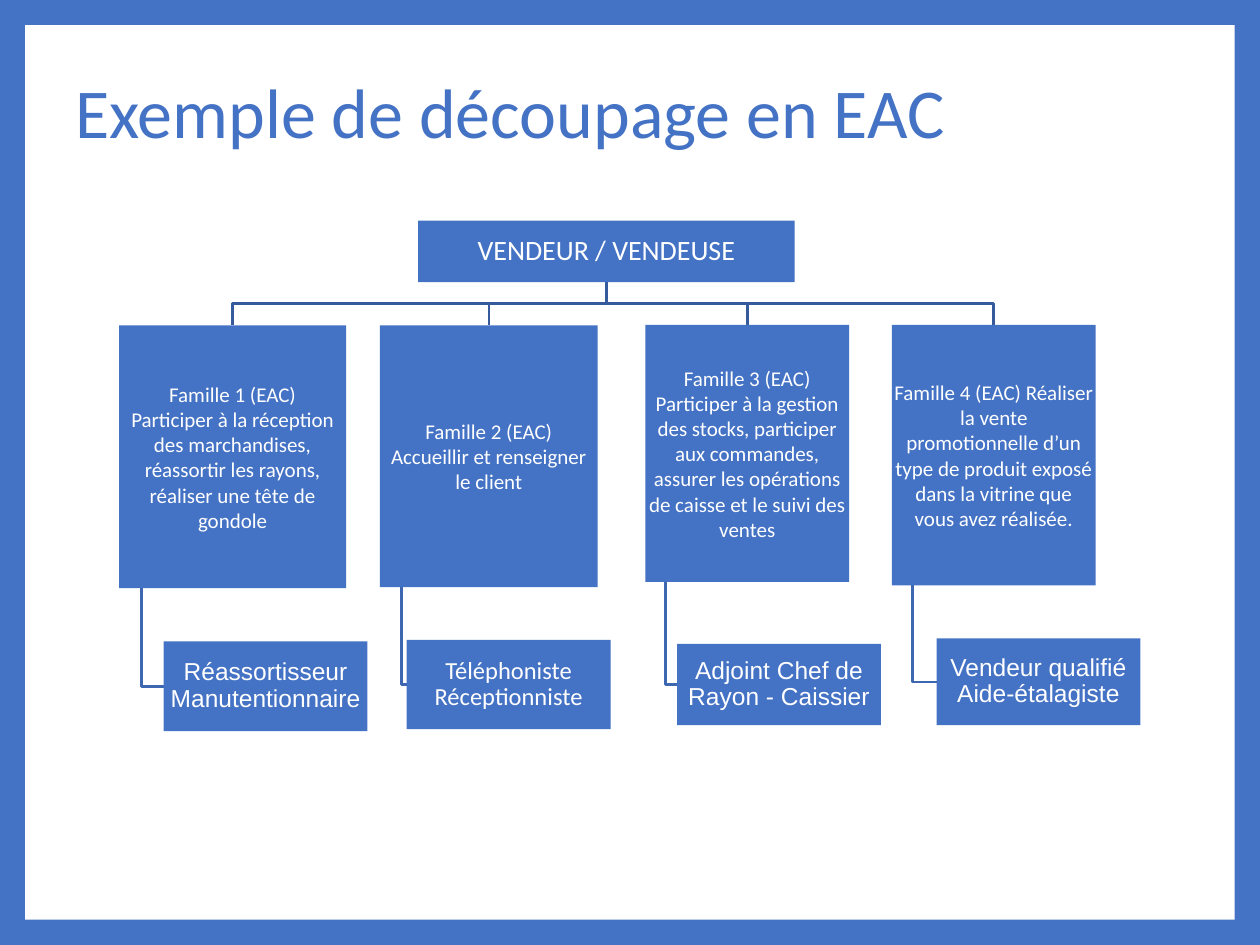
import pptx
import pptx.dml.color
import pptx.enum.shapes
import pptx.enum.text
import pptx.util

Cm = pptx.util.Cm
Pt = pptx.util.Pt
ALIGN = pptx.enum.text.PP_ALIGN

BLUE, WHITE = "4472C4", "FFFFFF"
TRUNK, BRANCH = "365B9D", "3E67B2"
TITLE = "Exemple de découpage en EAC"
ROOT = {"text": ["VENDEUR / VENDEUSE"], "area": (8.43, 4.45, 7.59, 1.24)}
FAMILIES = [
    {"text": ["Famille 1 (EAC)",
              "Participer à la réception des marchandises, réassortir les rayons, "
              "réaliser une tête de gondole"],
     "area": (2.4, 6.56, 4.58, 5.3),
     "job": "Réassortisseur Manutentionnaire", "job_font": "Arial",
     "job_area": (3.3, 12.93, 4.11, 1.81)},
    {"text": ["Famille 2 (EAC)", "Accueillir et renseigner le client"],
     "area": (7.66, 6.56, 4.39, 5.28),
     "job": "Téléphoniste Réceptionniste", "job_font": "Calibri",
     "job_area": (8.2, 12.9, 4.11, 1.8)},
    {"text": ["Famille 3 (EAC)",
              "Participer à la gestion des stocks, participer aux commandes, "
              "assurer les opérations de caisse et le suivi des ventes"],
     "area": (13.01, 6.55, 4.11, 5.18),
     "job": "Adjoint Chef de Rayon - Caissier", "job_font": "Arial",
     "job_area": (13.65, 12.98, 4.11, 1.64)},
    {"text": ["Famille 4 (EAC) Réaliser la vente promotionnelle d’un type de produit "
              "exposé dans la vitrine que vous avez réalisée."],
     "area": (17.98, 6.55, 4.11, 5.25),
     "job": "Vendeur qualifié Aide-étalagiste", "job_font": "Arial",
     "job_area": (18.88, 12.87, 4.11, 1.75)},
]


def paint(target, color):
    target.solid()
    target.fore_color.rgb = pptx.dml.color.RGBColor.from_string(color)


def apply(target, values):
    for name, value in values.items():
        setattr(target, name, value)


def write(box, lines, size, font, color, align, spacing, inset):
    frame = box.text_frame
    apply(frame, {"word_wrap": True,
                  "auto_size": pptx.enum.text.MSO_AUTO_SIZE.NONE,
                  "vertical_anchor": pptx.enum.text.MSO_ANCHOR.MIDDLE,
                  "margin_left": Cm(inset), "margin_right": Cm(inset),
                  "margin_top": Cm(inset), "margin_bottom": Cm(inset)})
    for index, line in enumerate(lines):
        para = frame.add_paragraph() if index else frame.paragraphs[0]
        apply(para, {"alignment": align, "line_spacing": spacing})
        span = para.add_run()
        span.text = line
        apply(span.font, {"size": Pt(size), "name": font})
        paint(span.font.fill, color)


def add_block(page, area, color):
    box = page.shapes.add_shape(pptx.enum.shapes.MSO_SHAPE.RECTANGLE, *map(Cm, area))
    box.shadow.inherit = False
    paint(box.fill, color)
    box.line.fill.background()
    return box


def add_label(page, area, lines, size, font="Calibri", spacing=0.9):
    write(add_block(page, area, BLUE), lines, size, font, WHITE,
          ALIGN.CENTER, spacing, 0.03)


def add_bend(page, points, color):
    start, *others = [(Cm(x), Cm(y)) for x, y in points]
    builder = page.shapes.build_freeform(*start)
    builder.add_line_segments(others, close=False)
    bend = builder.convert_to_shape()
    bend.shadow.inherit = False
    bend.fill.background()
    bend.line.width = Pt(1.5)
    paint(bend.line.fill, color)


def main():
    deck = pptx.Presentation()
    apply(deck, {"slide_width": Cm(25.4), "slide_height": Cm(19.05)})
    page = deck.slides.add_slide(deck.slide_layouts[5])
    paint(page.background.fill, BLUE)

    title = page.shapes.title
    apply(title, {"left": Cm(1.27), "top": Cm(0.74),
                  "width": Cm(22.86), "height": Cm(3.18)})
    write(title, [TITLE], 40, "Calibri", BLUE, ALIGN.LEFT, 0.9, 0.25)
    panel = add_block(page, (0.51, 0.51, 24.38, 18.03), WHITE)
    title._element.addprevious(panel._element)

    root_left, root_top, root_width, root_height = ROOT["area"]
    root_middle = root_left + root_width / 2
    root_bottom = root_top + root_height
    for family in FAMILIES:
        left, top, width, height = family["area"]
        middle = left + width / 2
        fork = (root_bottom + top) / 2
        add_bend(page, [(root_middle, root_bottom), (root_middle, fork),
                        (middle, fork), (middle, top)], TRUNK)
        job_left, job_top, job_width, job_height = family["job_area"]
        stem = left + width / 10
        job_middle = job_top + job_height / 2
        add_bend(page, [(stem, top + height), (stem, job_middle),
                        (job_left, job_middle)], BRANCH)

    add_label(page, ROOT["area"], ROOT["text"], 16)
    for family in FAMILIES:
        add_label(page, family["area"], family["text"], 12, spacing=1.0)
        add_label(page, family["job_area"], [family["job"]], 14, family["job_font"])
    deck.save("out.pptx")


if __name__ == "__main__":
    main()
